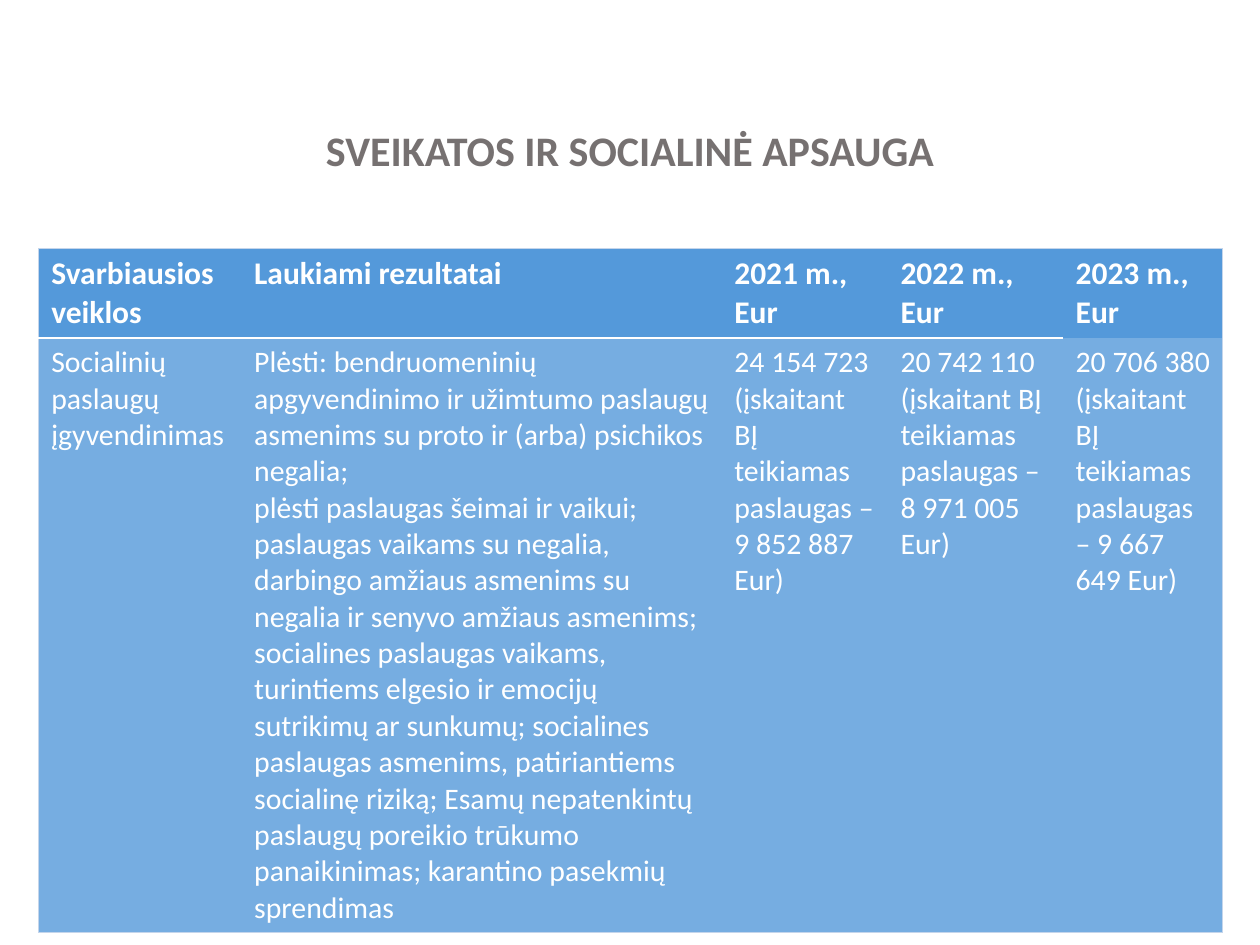
from lxml.etree import SubElement
from pptx import Presentation
from pptx.dml.color import RGBColor
from pptx.enum.text import MSO_ANCHOR, PP_ALIGN
from pptx.oxml.ns import qn
from pptx.util import Cm, Pt

# Content
TITLE = "SVEIKATOS IR SOCIALINĖ APSAUGA"
ROWS = [
    ["Svarbiausios veiklos", "Laukiami rezultatai",
     "2021 m., Eur", "2022 m., Eur", "2023 m., Eur"],
    ["Socialinių paslaugų įgyvendinimas",
     "Plėsti: bendruomeninių apgyvendinimo ir užimtumo paslaugų asmenims su "
     "proto ir (arba) psichikos negalia;\n"
     "plėsti paslaugas šeimai ir vaikui; paslaugas vaikams su negalia, "
     "darbingo amžiaus asmenims su negalia ir senyvo amžiaus asmenims; "
     "socialines paslaugas vaikams, turintiems elgesio ir emocijų sutrikimų "
     "ar sunkumų; socialines paslaugas asmenims, patiriantiems socialinę "
     "riziką; Esamų nepatenkintų paslaugų poreikio trūkumo panaikinimas; "
     "karantino pasekmių sprendimas",
     "24 154 723 (įskaitant BĮ teikiamas paslaugas – 9 852 887 Eur)",
     "20 742 110 (įskaitant BĮ teikiamas paslaugas – 8 971 005 Eur)",
     "20 706 380 (įskaitant BĮ teikiamas paslaugas – 9 667 649 Eur)"],
]

# Format
COLORS = {"title": "767171", "text": "FFFFFF", "header": "5499DA",
          "body": "76ADE1", "edge": "C4D5EB", "rule": "FFFFFF"}
FONT = "Calibri"
COL_WIDTHS = [4.09, 9.68, 3.35, 3.53, 3.22]
ROW_HEIGHTS = [1.8, 11.94]
ROW_STYLES = [{"size": 18, "bold": True}, {"size": 17}]
PLAIN_TABLE = "{2D5ABB26-0587-4C30-8999-92F81FD0307C}"


def write(tf, text, size, color="text", bold=False, align=None, spacing=None):
    tf.text = text
    for p in tf.paragraphs:
        p.alignment = align
        p.line_spacing = spacing
        for r in p.runs:
            r.font.name = FONT
            r.font.size = Pt(size)
            r.font.bold = bold
            r.font.color.rgb = RGBColor.from_string(COLORS[color])


def add_border(cell, side, color, width):
    ln = SubElement(cell._tc.get_or_add_tcPr(), qn(f"a:ln{side}"), w=str(Pt(width)))
    fill = SubElement(ln, qn("a:solidFill"))
    SubElement(fill, qn("a:srgbClr"), val=COLORS[color])


prs = Presentation()
prs.slide_width, prs.slide_height = Cm(25.4), Cm(19.05)
s = prs.slides.add_slide(prs.slide_layouts[5])

# Title
title = s.shapes.title
title.left, title.top, title.width, title.height = Cm(1.75), Cm(2.1), Cm(21.9), Cm(1.96)
title.text_frame.vertical_anchor = MSO_ANCHOR.MIDDLE
write(title.text_frame, TITLE, 24, "title", bold=True,
      align=PP_ALIGN.CENTER, spacing=0.9)

# Table
frame = s.shapes.add_table(len(ROWS), len(COL_WIDTHS), Cm(0.78), Cm(5.01),
                           Cm(sum(COL_WIDTHS)), Cm(sum(ROW_HEIGHTS)))
table = frame.table
table._tbl.tblPr.find(qn("a:tableStyleId")).text = PLAIN_TABLE
for column, width in zip(table.columns, COL_WIDTHS):
    column.width = Cm(width)
for row, height in zip(table.rows, ROW_HEIGHTS):
    row.height = Cm(height)

last = len(COL_WIDTHS) - 1
for i, texts in enumerate(ROWS):
    for j, text in enumerate(texts):
        cell = table.cell(i, j)
        write(cell.text_frame, text, **ROW_STYLES[i])
        # Outer edges, and a white rule under the header up to the last column
        if j == 0:
            add_border(cell, "L", "edge", 0.5)
        if j == last:
            add_border(cell, "R", "edge", 0.5)
        if i == 0:
            add_border(cell, "T", "edge", 0.5)
            if j < last:
                add_border(cell, "B", "rule", 1.5)
        else:
            add_border(cell, "B", "edge", 0.5)
        cell.fill.solid()
        cell.fill.fore_color.rgb = RGBColor.from_string(
            COLORS["body" if i else "header"])

prs.save("out.pptx")
